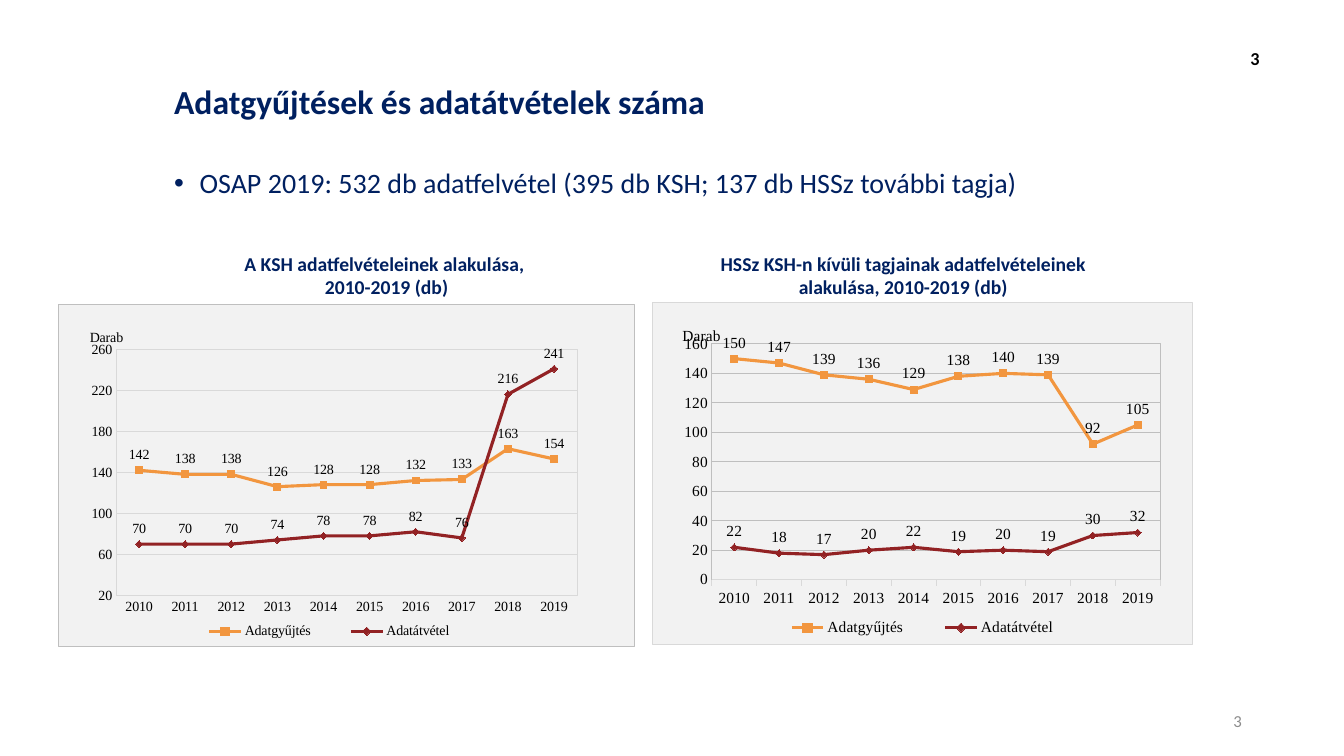
from lxml.etree import SubElement
from pptx import Presentation
from pptx.chart.data import CategoryChartData
from pptx.dml.color import RGBColor
from pptx.enum.chart import XL_CHART_TYPE, XL_LABEL_POSITION, XL_LEGEND_POSITION, XL_TICK_MARK
from pptx.enum.text import MSO_ANCHOR, PP_ALIGN
from pptx.oxml import parse_xml
from pptx.oxml.ns import nsdecls, qn
from pptx.util import Cm, Pt

COLORS = {"navy": "002060", "black": "000000", "page": "8C8C8C", "panel": "F2F2F2",
          "light": "D9D9D9", "mid": "BFBFBF", "orange": "F2963F", "red": "922224"}
YEARS = [str(year) for year in range(2010, 2020)]
SERIES = (("Adatgyűjtés", "orange"), ("Adatátvétel", "red"))


def rgb(name):
    return RGBColor.from_string(COLORS[name])


def set_layout(element, index, box, inner=False):
    """Place a chart part at box (x, y, w, h), as fractions of the chart."""
    for old in element.findall(qn("c:layout")):
        element.remove(old)
    layout = parse_xml(f"<c:layout {nsdecls('c')}><c:manualLayout/></c:layout>")
    manual = layout[0]
    if inner:
        SubElement(manual, qn("c:layoutTarget")).set("val", "inner")
    for tag in ("xMode", "yMode"):
        SubElement(manual, qn(f"c:{tag}")).set("val", "edge")
    for tag, value in zip("xywh", box):
        SubElement(manual, qn(f"c:{tag}")).set("val", str(value))
    element.insert(index, layout)


def outline(color, fill="<a:noFill/>"):
    return parse_xml(
        f"<c:spPr {nsdecls('c', 'a')}>{fill}<a:ln w=\"9525\"><a:solidFill>"
        f"<a:srgbClr val=\"{COLORS[color]}\"/></a:solidFill></a:ln></c:spPr>")


class Deck:
    def __init__(self):
        self.prs = Presentation()
        self.prs.slide_width, self.prs.slide_height = Cm(33.87), Cm(19.05)
        self.s = self.prs.slides.add_slide(self.prs.slide_layouts[6])
        self.font = "Calibri"
        self.chart_font = "Times New Roman"

    def style(self, font, size, color="black", bold=False, name=None):
        font.name, font.size, font.bold = name or self.font, Pt(size), bold
        font.color.rgb = rgb(color)

    def text(self, box, lines, size, color="navy", bold=False, align=PP_ALIGN.LEFT,
             anchor=MSO_ANCHOR.TOP, spacing=1.0, bullet=False):
        tf = self.s.shapes.add_textbox(*map(Cm, box)).text_frame
        tf.word_wrap, tf.vertical_anchor = True, anchor
        p = tf.paragraphs[0]
        p.alignment, p.line_spacing = align, spacing
        if bullet:
            pPr = p._p.get_or_add_pPr()
            pPr.set("marL", str(Cm(0.64)))
            pPr.set("indent", str(-Cm(0.64)))
            SubElement(pPr, qn("a:buFont")).set("typeface", "Arial")
            SubElement(pPr, qn("a:buChar")).set("char", "•")
        for i, line in enumerate(lines):
            if i:
                p.add_line_break()
            r = p.add_run()
            r.text = line
            self.style(r.font, size, color, bold)

    def line_chart(self, box, values, size, plot_box, legend_box, title_at,
                   scale, grid, border, tick):
        data = CategoryChartData()
        data.categories = YEARS
        for (name, _), row in zip(SERIES, values):
            data.add_series(name, row)
        chart = self.s.shapes.add_chart(XL_CHART_TYPE.LINE, *map(Cm, box), data).chart
        self.style(chart.font, size, name=self.chart_font)
        chart.has_title = False
        self.axes(chart, size, title_at, scale, grid, tick)

        chart.has_legend = True
        chart.legend.position = XL_LEGEND_POSITION.BOTTOM
        chart.legend.include_in_layout = False
        self.style(chart.legend.font, size, name=self.chart_font)
        set_layout(chart.legend._element, 1, legend_box)

        plot = chart.plots[0]
        plot.vary_by_categories = False
        for series, (_, color) in zip(plot.series, SERIES):
            series.smooth = False
            series.marker.style = None
            series.format.line.color.rgb = rgb(color)
            series.format.line.width = Pt(2.25)
            labels = series.data_labels
            labels.show_value, labels.position = True, XL_LABEL_POSITION.ABOVE
            self.style(labels.font, size, name=self.chart_font)

        space = chart._chartSpace
        plot_area = space.chart.plotArea
        set_layout(plot_area, 0, plot_box, inner=True)
        plot_area.append(outline(grid))
        fill = f"<a:solidFill><a:srgbClr val=\"{COLORS['panel']}\"/></a:solidFill>"
        space.chart.addnext(outline(border, fill))
        return chart

    def axes(self, chart, size, title_at, scale, grid, tick):
        cat, val = chart.category_axis, chart.value_axis
        for axis in (cat, val):
            self.style(axis.tick_labels.font, size, name=self.chart_font)
            axis.major_tick_mark = axis.minor_tick_mark = XL_TICK_MARK.NONE
        cat.major_tick_mark = tick
        cat.format.line.color.rgb = rgb("light")
        cat.format.line.width = Pt(0.75)
        val.format.line.fill.background()
        val.minimum_scale, val.maximum_scale, val.major_unit = scale
        val.major_gridlines.format.line.color.rgb = rgb(grid)
        val.major_gridlines.format.line.width = Pt(0.75)
        tf = val.axis_title.text_frame
        r = tf.paragraphs[0].add_run()
        r.text = "Darab"
        self.style(r.font, size, name=self.chart_font)
        body = tf._txBody.bodyPr
        body.set("rot", "0")
        body.set("vert", "horz")
        set_layout(val.axis_title._element, 1, title_at)

    def point_label(self, chart, series, point, text, size):
        label = chart.plots[0].series[series].points[point].data_label
        r = label.text_frame.paragraphs[0].add_run()
        r.text = text
        self.style(r.font, size, name=self.chart_font)
        label.position = XL_LABEL_POSITION.ABOVE


def main():
    deck = Deck()
    middle = MSO_ANCHOR.MIDDLE
    deck.text((23.93, 17.65, 7.62, 1.02), ["3"], 12, "page", align=PP_ALIGN.RIGHT, anchor=middle)
    deck.text((30.99, 0.97, 1, 1.02), ["3"], 13, "black", True, PP_ALIGN.RIGHT, middle)
    deck.text((4.14, 1.98, 14.4, 1.24), ["Adatgyűjtések és adatátvételek száma"],
              24, bold=True, anchor=middle, spacing=0.9)
    deck.text((4.14, 4.14, 22.28, 1.17),
              ["OSAP 2019: 532 db adatfelvétel (395 db KSH; 137 db HSSz további tagja)"],
              20, align=PP_ALIGN.JUSTIFY, spacing=0.9, bullet=True)
    deck.text((5.72, 6.22, 8.05, 1.45),
              ["A KSH adatfelvételeinek alakulása, ", "2010-2019 (db)"],
              14, bold=True, align=PP_ALIGN.CENTER)
    deck.text((17.81, 6.22, 9.91, 1.45),
              ["HSSz KSH-n kívüli tagjainak adatfelvételeinek alakulása, 2010-2019 (db)"],
              14, bold=True, align=PP_ALIGN.CENTER)

    ksh = deck.line_chart(
        (1.46, 7.67, 14.55, 8.64),
        ((142, 138, 138, 126, 128, 128, 132, 133, 163, 153),
         (70, 70, 70, 74, 78, 78, 82, 76, 216, 241)),
        10, (0.1, 0.13, 0.8, 0.72), (0.2, 0.92, 0.54, 0.07), (0.05, 0.06),
        (20, 260, 40), "light", "mid", XL_TICK_MARK.NONE)
    deck.point_label(ksh, 0, 9, "154", 10)
    deck.line_chart(
        (16.43, 7.62, 13.64, 8.64),
        ((150, 147, 139, 136, 129, 138, 140, 139, 92, 105),
         (22, 18, 17, 20, 22, 19, 20, 19, 30, 32)),
        11, (0.11, 0.12, 0.83, 0.69), (0.19, 0.91, 0.62, 0.08), (0.05, 0.06),
        (0, 160, 20), "mid", "light", XL_TICK_MARK.OUTSIDE)
    deck.prs.save("out.pptx")


if __name__ == "__main__":
    main()
